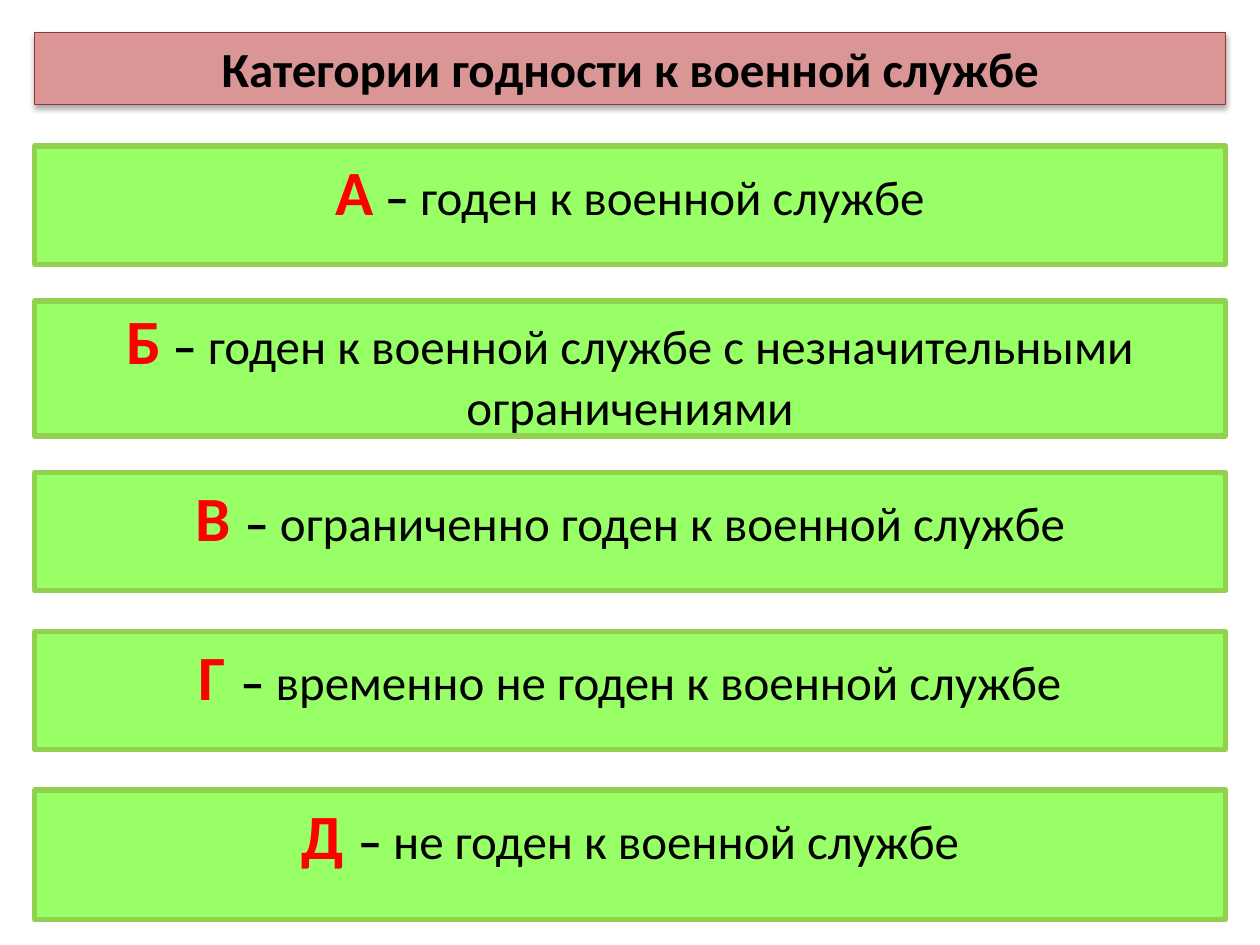
from dataclasses import dataclass
from typing import Any

from lxml import etree
from pptx import Presentation
from pptx import util as u
from pptx.dml.color import RGBColor
from pptx.enum import shapes, text
from pptx.oxml import ns

BLACK = RGBColor(0x00, 0x00, 0x00)
RED = RGBColor(0xFF, 0x00, 0x00)
ROSE = RGBColor(0xD9, 0x96, 0x94)
MAROON = RGBColor(0x95, 0x37, 0x35)
LIME = RGBColor(0x99, 0xFF, 0x66)
GREEN = RGBColor(0x92, 0xD0, 0x50)

HEADING = {"size": u.Pt(28), "bold": True, "color": BLACK}
LETTER = {"size": u.Pt(36), "bold": True, "color": RED}
BODY = {"size": u.Pt(28), "bold": False, "color": BLACK}

TOP, MIDDLE = text.MSO_ANCHOR.TOP, text.MSO_ANCHOR.MIDDLE
CATEGORIES = [
    (11.6, 9.4, TOP, "А", " – ", "годен к военной службе"),
    (23.9, 10.7, MIDDLE, "Б", " – ", "годен к военной службе с незначительными ограничениями"),
    (37.5, 9.4, TOP, "В ", "– ", "ограниченно годен к военной службе"),
    (50.1, 9.4, TOP, "Г ", "– ", "временно не годен к военной службе"),
    (62.7, 10.3, TOP, "Д ", "– ", "не годен к военной службе"),
]


@dataclass
class Board:
    """Draws full-width bars on a slide grid of 0.1 inch rows and columns."""

    slide: Any
    font: str = "Calibri"
    cell: int = u.Inches(0.1)
    left: float = 2.75
    width: float = 94.5

    def bar(self, row, rows, fill, line, line_width, runs, anchor=TOP):
        box = [round(value * self.cell) for value in (self.left, row, self.width, rows)]
        shape = self.slide.shapes.add_shape(shapes.MSO_SHAPE.RECTANGLE, *box)
        shape.shadow.inherit = False
        shape.fill.solid()
        shape.fill.fore_color.rgb = fill
        shape.line.color.rgb = line
        shape.line.width = u.Pt(line_width)
        frame = shape.text_frame
        frame.word_wrap = True
        frame.vertical_anchor = anchor
        paragraph = frame.paragraphs[0]
        paragraph.alignment = text.PP_ALIGN.CENTER
        for words, style in runs:
            self.run(paragraph, words, style)
        return shape

    def run(self, paragraph, words, style):
        run = paragraph.add_run()
        run.text = words
        run.font.name = self.font
        for name, value in style.items():
            if name == "color":
                run.font.color.rgb = value
            else:
                setattr(run.font, name, value)

    def title(self, row, rows, words):
        shape = self.bar(row, rows, ROSE, MAROON, 0.75, [(words, HEADING)])
        effects = shape._element.spPr.find(ns.qn("a:effectLst"))
        shadow = etree.SubElement(
            effects, ns.qn("a:outerShdw"), blurRad=str(u.Pt(3.1)),
            dist=str(u.Pt(1.8)), dir="5400000", rotWithShape="0")
        color = etree.SubElement(shadow, ns.qn("a:srgbClr"), val=str(BLACK))
        etree.SubElement(color, ns.qn("a:alpha"), val="35000")

    def category(self, row, rows, anchor, letter, dash, words):
        runs = [(letter, LETTER), (dash, HEADING), (words, BODY)]
        self.bar(row, rows, LIME, GREEN, 3, runs, anchor)


def main():
    presentation = Presentation()
    presentation.slide_width = u.Inches(10)
    presentation.slide_height = u.Inches(7.5)
    board = Board(presentation.slides.add_slide(presentation.slide_layouts[6]))
    board.title(2.6, 5.7, "Категории годности к военной службе")
    for category in CATEGORIES:
        board.category(*category)
    presentation.save("out.pptx")


if __name__ == "__main__":
    main()
